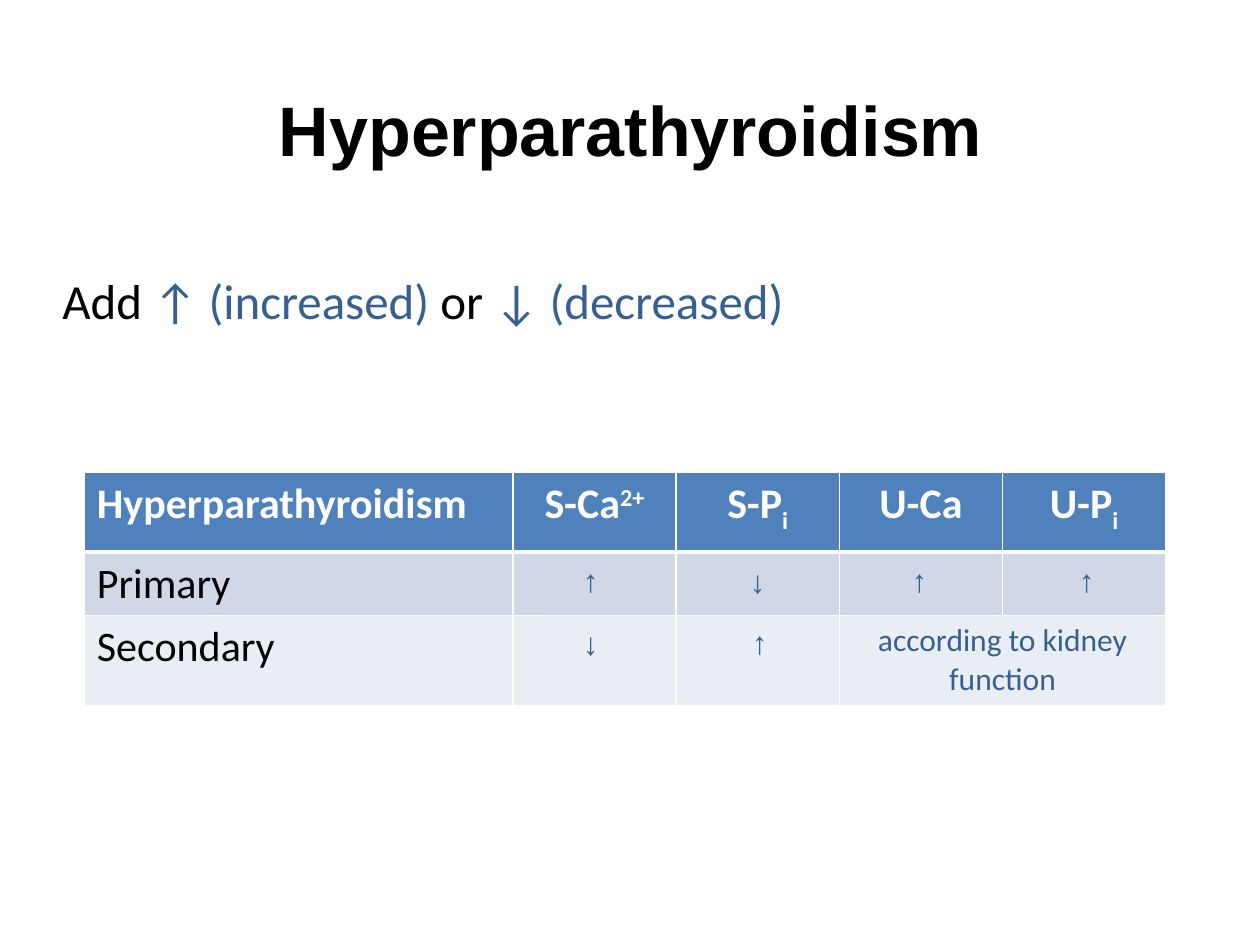
from pptx import Presentation
from pptx import util as u
from pptx.dml.color import RGBColor
from pptx.enum import shapes, text
from pptx.oxml import parse_xml
from pptx.oxml.ns import nsdecls

BLACK = RGBColor(0x00, 0x00, 0x00)
WHITE = RGBColor(0xFF, 0xFF, 0xFF)
BLUE = RGBColor(0x37, 0x60, 0x92)
HEADER = RGBColor(0x4F, 0x81, 0xBD)
BAND_DARK = RGBColor(0xD0, 0xD8, 0xE8)
BAND_LIGHT = RGBColor(0xE9, 0xED, 0xF4)
CENTER = text.PP_ALIGN.CENTER


def add_run(p, words, color, baseline=0, **fmt):
    r = p.add_run()
    r.text = words
    for name, value in fmt.items():
        setattr(r.font, name, value)
    r.font.color.rgb = color
    if baseline:
        r._r.get_or_add_rPr().set("baseline", str(baseline * 1000))


def add_box(s, left, top, width, height, **fmt):
    sp = s.shapes.add_textbox(u.Cm(left), u.Cm(top), u.Cm(width), u.Cm(height))
    tf = sp.text_frame
    for name, value in fmt.items():
        setattr(tf, name, value)
    return tf.paragraphs[0]


prs = Presentation()
prs.slide_width, prs.slide_height = u.Cm(25.4), u.Cm(19.05)
s = prs.slides.add_slide(prs.slide_layouts[6])

panels = [(shapes.MSO_SHAPE.ROUNDED_RECTANGLE, 0.25, 0.28, 24.89, 18.8, 100),
          (shapes.MSO_SHAPE.RECTANGLE, 0.76, 0.76, 23.88, 3.68, 83),
          (shapes.MSO_SHAPE.RECTANGLE, 1.04, 1.04, 23.27, 3.1, 100)]
for kind, left, top, width, height, opacity in panels:
    sp = s.shapes.add_shape(kind, u.Cm(left), u.Cm(top), u.Cm(width), u.Cm(height))
    sp.shadow.inherit = False
    sp.fill.solid()
    sp.fill.fore_color.rgb = WHITE
    sp.line.fill.background()
    if kind == shapes.MSO_SHAPE.ROUNDED_RECTANGLE:
        sp.adjustments[0] = 0.02
    if opacity < 100:
        clr = sp._element.spPr.find(".//{*}srgbClr")
        clr.append(parse_xml(f'<a:alpha {nsdecls("a")} val="{opacity * 1000}"/>'))

p = add_box(s, 1.5, 1.15, 22.43, 2.87, word_wrap=True,
            vertical_anchor=text.MSO_ANCHOR.MIDDLE)
p.alignment = CENTER
add_run(p, "Hyperparathyroidism", BLACK, name="Arial", size=u.Pt(40), bold=True)

p = add_box(s, 0.69, 5.33, 24.41, 12.8, word_wrap=True)
p._p.get_or_add_pPr().set("marL", str(u.Cm(0.32)))
for words, color in [("Add ", BLACK), ("↑ (increased) ", BLUE),
                     ("or ", BLACK), ("↓ (decreased)", BLUE)]:
    add_run(p, words, color, name="Calibri", size=u.Pt(28))

tbl = s.shapes.add_table(3, 5, u.Cm(1.7), u.Cm(9.53), u.Cm(21.8), u.Cm(4.69)).table
for col, width in zip(tbl.columns, [8.64] + [3.29] * 4):
    col.width = u.Cm(width)
for row, height in zip(tbl.rows, [1.6, 1.28, 1.81]):
    row.height = u.Cm(height)

for i, fill in enumerate([HEADER, BAND_DARK, BAND_LIGHT]):
    for cell in tbl.rows[i].cells:
        tcPr = cell._tc.get_or_add_tcPr()
        for side in "LRTB":
            heavy = (i, side) in [(0, "B"), (1, "T")]
            tcPr.append(parse_xml(
                f'<a:ln{side} {nsdecls("a")} w="{u.Pt(3 if heavy else 1)}">'
                f'<a:solidFill><a:srgbClr val="{WHITE}"/></a:solidFill></a:ln{side}>'))
        cell.fill.solid()
        cell.fill.fore_color.rgb = fill

tbl.cell(2, 3).merge(tbl.cell(2, 4))

headings = [("Hyperparathyroidism", "", 0), ("S-Ca", "2+", 30), ("S-P", "i", -25),
            ("U-Ca", "", 0), ("U-P", "i", -25)]
for j, (words, mark, baseline) in enumerate(headings):
    p = tbl.cell(0, j).text_frame.paragraphs[0]
    if j:
        p.alignment = CENTER
    fmt = {"name": "Calibri", "size": u.Pt(24), "bold": True}
    add_run(p, words, WHITE, **fmt)
    if mark:
        add_run(p, mark, WHITE, baseline, **fmt)

for i, words in enumerate(["Primary", "Secondary"], 1):
    p = tbl.cell(i, 0).text_frame.paragraphs[0]
    add_run(p, words, BLACK, name="Calibri", size=u.Pt(24), bold=False)

p = tbl.cell(2, 3).text_frame.paragraphs[0]
p.alignment = CENTER
add_run(p, "according to kidney function", BLUE, name="Calibri", size=u.Pt(18), bold=False)

arrows = [("↑", 11.5, 11.18), ("↓", 14.87, 11.2), ("↑", 18.13, 11.18),
          ("↑", 21.5, 11.18), ("↓", 11.5, 12.45), ("↑", 14.91, 12.43)]
for arrow, left, top in arrows:
    p = add_box(s, left, top, 0.8, 1.02, word_wrap=False,
                auto_size=text.MSO_AUTO_SIZE.SHAPE_TO_FIT_TEXT)
    add_run(p, arrow, BLUE, name="Arial", size=u.Pt(18), bold=True)

prs.save("out.pptx")
